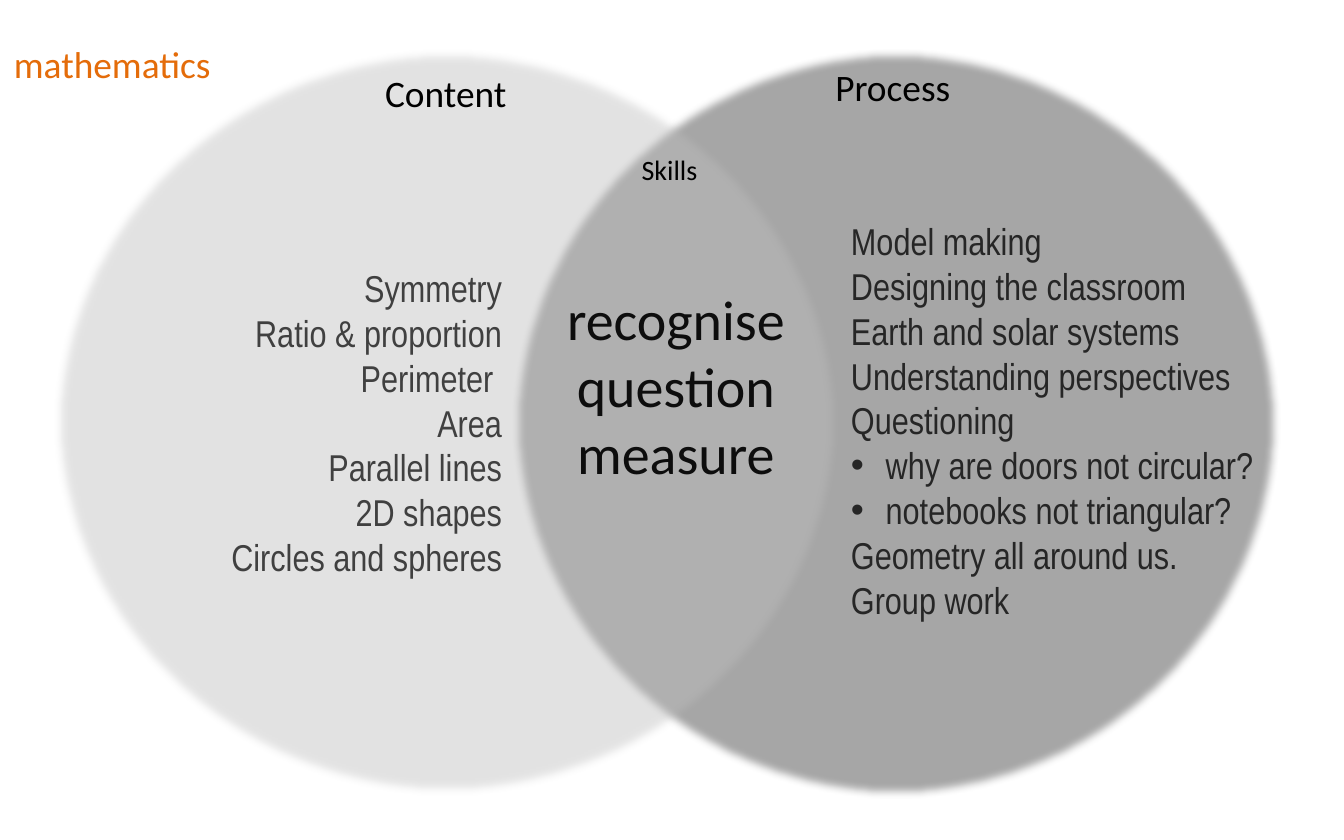
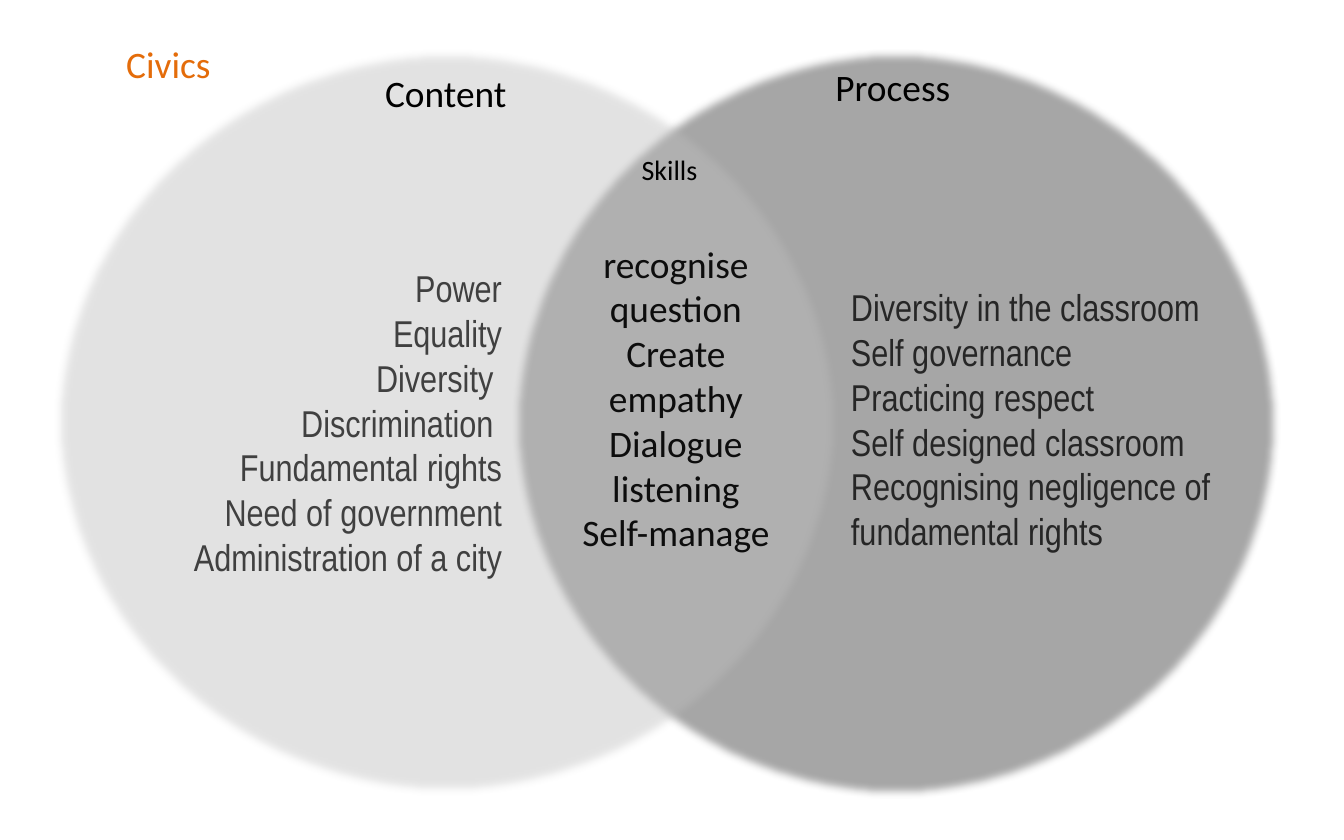
from dataclasses import dataclass
from typing import NamedTuple

from lxml.etree import SubElement
from pptx import Presentation
from pptx.dml.color import RGBColor
from pptx.enum.shapes import MSO_SHAPE
from pptx.enum.text import MSO_ANCHOR, MSO_AUTO_SIZE as AutoSize, PP_ALIGN as Align
from pptx.oxml.ns import qn
from pptx.slide import Slide
from pptx.util import Inches, Pt

TITLE_ONLY = 5
TITLE_RIGHT = 1.98
BULLET_INDENT = 0.31
SOFT_EDGE = Pt(5)


@dataclass(frozen=True)
class Theme:
    body_font: str = "Arial Narrow"
    label_font: str = "Calibri"
    accent: str = "E46C0A"
    label: str = "000000"
    content: str = "404040"
    process: str = "262626"
    skills: str = "0D0D0D"
    content_circle: str = "BFBFBF"
    process_circle: str = "A6A6A6"
    small: int = 18
    normal: int = 24
    large: int = 36


THEME = Theme()


class Box(NamedTuple):
    left: float
    top: float
    width: float
    height: float


class Style(NamedTuple):
    font: str
    color: str
    size: int = THEME.normal
    align: Align = Align.LEFT


class Circle(NamedTuple):
    box: Box
    color: str
    opacity: int


class Label(NamedTuple):
    text: str
    box: Box
    size: int


class Bullet(NamedTuple):
    text: str


@dataclass(frozen=True)
class Column:
    top: float
    height: float
    entries: tuple[str | Bullet, ...]


@dataclass(frozen=True)
class Subject:
    name: str
    title_width: float
    content: Column
    process: Column
    skills: Column
    skills_size: int


CIRCLES = (
    Circle(Box(4.58, 0.44, 6.85, 6.69), THEME.process_circle, 100),
    Circle(Box(0.49, 0.44, 7.01, 6.66), THEME.content_circle, 43),
)
LABELS = (
    Label("Content", Box(3.34, 0.58, 1.3, 0.5), THEME.normal),
    Label("Process", Box(7.36, 0.52, 1.29, 0.5), THEME.normal),
    Label("Skills", Box(5.63, 1.31, 0.71, 0.4), THEME.small),
)
SUBJECTS = (
    Subject(
        "mathematics", 2.01,
        content=Column(2.32, 2.93, (
            "Symmetry", "Ratio & proportion", "Perimeter ", "Area",
            "Parallel lines", "2D shapes", "Circles and spheres")),
        process=Column(1.9, 3.74, (
            "Model making", "Designing the classroom",
            "Earth and solar systems", "Understanding perspectives",
            "Questioning", Bullet("why are doors not circular?"),
            Bullet("notebooks not triangular?"),
            "Geometry all around us.", "Group work")),
        skills=Column(2.49, 2.52, ("recognise", "question", "measure")),
        skills_size=THEME.large,
    ),
    Subject(
        "Civics", 0.97,
        content=Column(2.32, 2.93, (
            "Power", "Equality", "Diversity ", "Discrimination ",
            "Fundamental rights",
            "Need of government Administration of a city")),
        process=Column(2.49, 2.52, (
            "Diversity in the classroom", "Self governance",
            "Practicing respect", "Self designed classroom",
            "Recognising negligence of fundamental rights")),
        skills=Column(2.1, 3.33, (
            "recognise", "question", "Create", "empathy", "Dialogue",
            "listening", "Self-manage")),
        skills_size=THEME.normal,
    ),
)


def add_bullet(para) -> None:
    props = para._p.get_or_add_pPr()
    props.set("marL", str(Inches(BULLET_INDENT)))
    props.set("indent", str(-Inches(BULLET_INDENT)))
    SubElement(props, qn("a:buFont"), typeface="Arial")
    SubElement(props, qn("a:buChar"), char="•")


def fill_text(shape, entries: tuple[str | Bullet, ...], style: Style, wrap: bool) -> None:
    frame = shape.text_frame
    frame.word_wrap = wrap
    frame.auto_size = AutoSize.SHAPE_TO_FIT_TEXT
    frame.vertical_anchor = MSO_ANCHOR.TOP
    for index, entry in enumerate(entries):
        para = frame.add_paragraph() if index else frame.paragraphs[0]
        para.alignment = style.align
        para.font.name = style.font
        para.font.size = Pt(style.size)
        para.font.color.rgb = RGBColor.from_string(style.color)
        if isinstance(entry, Bullet):
            add_bullet(para)
            entry = entry.text
        para.add_run().text = entry


def add_text(page: Slide, box: Box, entries: tuple[str | Bullet, ...],
             style: Style, wrap: bool = True) -> None:
    shape = page.shapes.add_textbox(*map(Inches, box))
    fill_text(shape, entries, style, wrap)


def add_column(page: Slide, column: Column, left: float, width: float, style: Style) -> None:
    add_text(page, Box(left, column.top, width, column.height), column.entries, style)


def add_circle(page: Slide, circle: Circle) -> None:
    """Draw a borderless, soft-edged circle of the Venn diagram."""
    shape = page.shapes.add_shape(MSO_SHAPE.OVAL, *map(Inches, circle.box))
    shape.shadow.inherit = False
    shape.line.fill.background()
    shape.fill.solid()
    shape.fill.fore_color.rgb = RGBColor.from_string(circle.color)
    props = shape._element.spPr
    if circle.opacity < 100:
        color = props.find(qn("a:solidFill")).find(qn("a:srgbClr"))
        SubElement(color, qn("a:alpha"), val=str(circle.opacity * 1000))
    SubElement(props.find(qn("a:effectLst")), qn("a:softEdge"), rad=str(SOFT_EDGE))


def set_title(page: Slide, subject: Subject) -> None:
    title = page.shapes.title
    title.left = Inches(TITLE_RIGHT - subject.title_width)
    title.top, title.height = Inches(0.32), Inches(0.5)
    title.width = Inches(subject.title_width)
    style = Style(THEME.label_font, THEME.accent, align=Align.RIGHT)
    fill_text(title, (subject.name,), style, wrap=False)


def add_subject(deck, subject: Subject) -> None:
    page = deck.slides.add_slide(deck.slide_layouts[TITLE_ONLY])
    set_title(page, subject)
    for circle in CIRCLES:
        add_circle(page, circle)
    for label in LABELS:
        style = Style(THEME.label_font, THEME.label, label.size)
        add_text(page, label.box, (label.text,), style, wrap=False)
    add_column(page, subject.content, 1.51, 3.07,
               Style(THEME.body_font, THEME.content, align=Align.RIGHT))
    add_column(page, subject.process, 7.5, 4.33,
               Style(THEME.body_font, THEME.process))
    add_column(page, subject.skills, 4.72, 2.63,
               Style(THEME.label_font, THEME.skills, subject.skills_size, Align.CENTER))


def main() -> None:
    deck = Presentation()
    deck.slide_width, deck.slide_height = Inches(12), Inches(7.5)
    for subject in SUBJECTS:
        add_subject(deck, subject)
    deck.save("out.pptx")


if __name__ == "__main__":
    main()
